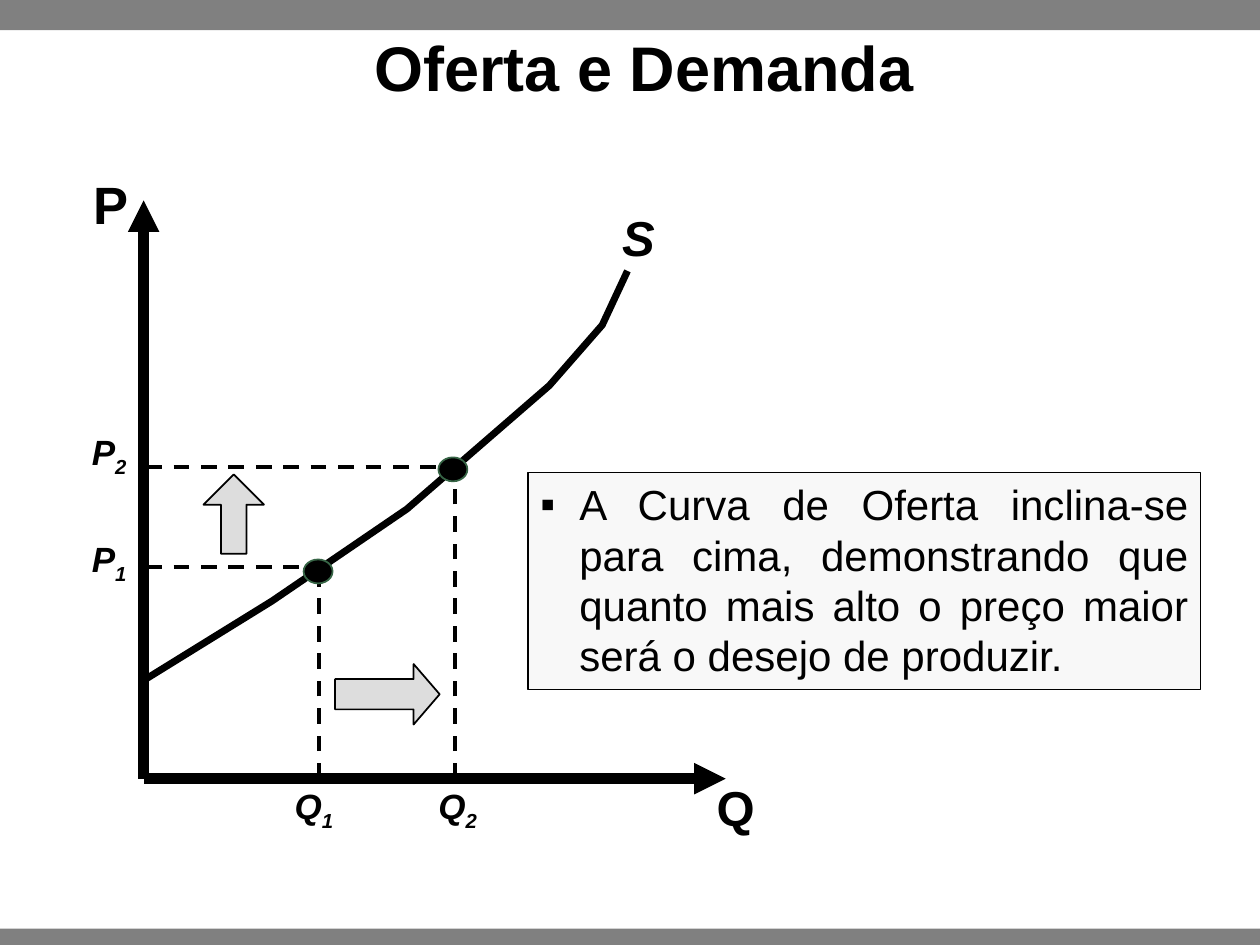
from typing import NamedTuple

from lxml import etree
from pptx import Presentation
from pptx import util as u
from pptx.dml.color import RGBColor
from pptx.enum import dml, shapes, text
from pptx.oxml.ns import qn

COLUMNS, ROWS = 100, 75
BLACK, GREY, GREEN = "000000", "808080", "376546"
ARROW_FILL, NOTE_FILL = "DDDDDD", "F8F8F8"
FONT = "Arial"
AXIS_COLUMN, AXIS_ROW = 11.4, 61.8

presentation = Presentation()
presentation.slide_width, presentation.slide_height = u.Inches(10), u.Inches(7.5)
CELL_WIDTH = presentation.slide_width / COLUMNS
CELL_HEIGHT = presentation.slide_height / ROWS
slide = presentation.slides.add_slide(presentation.slide_layouts[5])


class Box(NamedTuple):
    """Left, top, width and height in grid columns and rows."""
    left: float
    top: float
    width: float
    height: float

    def lengths(self) -> tuple:
        return (*at(self.left, self.top), *at(self.width, self.height))


class Equilibrium(NamedTuple):
    """A point on the supply curve with its guides and axis labels."""
    index: str
    guide_row: float
    guide_end: float
    guide_column: float
    guide_top: float
    dot: Box
    price_label: Box
    quantity_label: Box


class BlockArrow(NamedTuple):
    box: Box
    rotation: float
    adjustments: tuple


def at(column: float, row: float) -> tuple:
    return u.Emu(round(column * CELL_WIDTH)), u.Emu(round(row * CELL_HEIGHT))


def color(hex_value: str) -> RGBColor:
    return RGBColor.from_string(hex_value)


def format_line(line, hex_value: str, width: float) -> None:
    line.color.rgb = color(hex_value)
    line.width = u.Pt(width)


def format_run(run, size: float, bold: bool = False, italic: bool = False) -> None:
    font = run.font
    font.name, font.size, font.bold, font.italic = FONT, u.Pt(size), bold, italic
    font.color.rgb = color(BLACK)


def add_block(kind, box: Box, fill: str, line: str = "", width: float = 1):
    shape = slide.shapes.add_shape(kind, *box.lengths())
    shape.shadow.inherit = False
    shape.fill.solid()
    shape.fill.fore_color.rgb = color(fill)
    if line:
        format_line(shape.line, line, width)
    else:
        shape.line.fill.background()
    return shape


def add_line(start: tuple, end: tuple, width: float, dashed: bool = False, arrow: bool = False) -> None:
    connector = slide.shapes.add_connector(
        shapes.MSO_CONNECTOR.STRAIGHT, *at(*start), *at(*end))
    format_line(connector.line, BLACK, width)
    if dashed:
        connector.line.dash_style = dml.MSO_LINE.DASH
    if arrow:
        etree.SubElement(connector.line._get_or_add_ln(), qn("a:tailEnd"), type="triangle")
    etree.SubElement(connector._element.spPr, qn("a:effectLst"))


def add_label(box: Box, letter: str, size: float, italic: bool = False, subscript: str = "") -> None:
    frame = slide.shapes.add_textbox(*box.lengths()).text_frame
    frame.word_wrap = False
    paragraph = frame.paragraphs[0]
    paragraph.text = letter
    if subscript:
        run = paragraph.add_run()
        run.text = subscript
        run.font._element.set("baseline", "-25000")
    for run in paragraph.runs:
        format_run(run, size, bold=True, italic=italic)


def add_supply_curve(points: list) -> None:
    start, *others = [at(*point) for point in points]
    builder = slide.shapes.build_freeform(*start)
    builder.add_line_segments(others, close=False)
    curve = builder.convert_to_shape()
    curve.shadow.inherit = False
    curve.fill.background()
    format_line(curve.line, BLACK, 4)


def add_equilibrium(point: Equilibrium) -> None:
    add_line((AXIS_COLUMN + 0.2, point.guide_row), (point.guide_end, point.guide_row), 2.25, dashed=True)
    add_line((point.guide_column, AXIS_ROW), (point.guide_column, point.guide_top), 2.25, dashed=True)
    add_block(shapes.MSO_SHAPE.OVAL, point.dot, BLACK, GREEN)
    add_label(point.price_label, "P", 20, italic=True, subscript=point.index)
    add_label(point.quantity_label, "Q", 20, italic=True, subscript=point.index)


def add_block_arrow(arrow: BlockArrow) -> None:
    shape = add_block(shapes.MSO_SHAPE.RIGHT_ARROW, arrow.box, ARROW_FILL, BLACK)
    shape.rotation = arrow.rotation
    for index, value in enumerate(arrow.adjustments):
        shape.adjustments[index] = value


def add_note(box: Box, wording: str) -> None:
    frame = add_block(shapes.MSO_SHAPE.RECTANGLE, box, NOTE_FILL, BLACK, 0.75).text_frame
    frame.word_wrap = True
    frame.vertical_anchor = text.MSO_ANCHOR.TOP
    paragraph = frame.paragraphs[0]
    paragraph.text = wording
    paragraph.alignment = text.PP_ALIGN.JUSTIFY
    format_run(paragraph.runs[0], 24)
    properties = paragraph._element.get_or_add_pPr()
    properties.set("marL", str(u.Inches(0.31)))
    properties.set("indent", str(-u.Inches(0.31)))
    etree.SubElement(properties, qn("a:buFont"), typeface=FONT)
    etree.SubElement(properties, qn("a:buChar"), char="▪")


def set_title(box: Box, wording: str) -> None:
    title = slide.shapes.title
    title.left, title.top, title.width, title.height = box.lengths()
    frame = title.text_frame
    frame.text = wording
    frame.auto_size = text.MSO_AUTO_SIZE.NONE
    frame.vertical_anchor = text.MSO_ANCHOR.BOTTOM
    frame.paragraphs[0].alignment = text.PP_ALIGN.CENTER
    format_run(frame.paragraphs[0].runs[0], 36, bold=True)


BANDS = [Box(0, 73.7, COLUMNS, 1.3), Box(0, 0, COLUMNS, 2.4)]
SUPPLY = [(11.4, 54), (21.6, 47.7), (32.3, 40.4), (43.6, 30.6), (47.8, 25.8), (49.8, 21.5)]
EQUILIBRIA = [
    Equilibrium("1", 45, 26, 25.3, 45.3, Box(24.1, 44.4, 2.3, 1.9),
                Box(6.3, 42.2, 4.8, 4.3), Box(22.4, AXIS_ROW, 5.1, 4.3)),
    Equilibrium("2", 37.1, 36.6, 36.1, 36.8, Box(34.8, 36.3, 2.3, 1.9),
                Box(6.3, 33.7, 4.8, 4.3), Box(33.8, AXIS_ROW, 5.1, 4.3)),
]
BLOCK_ARROWS = [
    BlockArrow(Box(26.6, 52.7, 8.3, 4.8), 0, (0.5, 0.43)),
    BlockArrow(Box(15.4, 38.4, 6.3, 4.8), 270, (0.42, 0.5)),
]

for band in BANDS:
    add_block(shapes.MSO_SHAPE.RECTANGLE, band, GREY)
set_title(Box(8.6, 0.2, 85, 8.6), "Oferta e Demanda")
add_supply_curve(SUPPLY)
add_label(Box(48.4, 16, 4.6, 5.7), "S", 28, italic=True)
for tip in [(AXIS_COLUMN, 15.9), (57.6, AXIS_ROW)]:
    add_line((AXIS_COLUMN, AXIS_ROW), tip, 6, arrow=True)
add_label(Box(55.9, 61.2, 6, 5.7), "Q", 28)
add_label(Box(6.4, 13.2, 4.8, 5.7), "P", 30)
for equilibrium in EQUILIBRIA:
    add_equilibrium(equilibrium)
for block_arrow in BLOCK_ARROWS:
    add_block_arrow(block_arrow)
add_note(Box(41.9, 37.5, 53.4, 17.2),
         "A Curva de Oferta inclina-se para cima, demonstrando que "
         "quanto mais alto o preço maior será o desejo de produzir.")

presentation.save("out.pptx")
